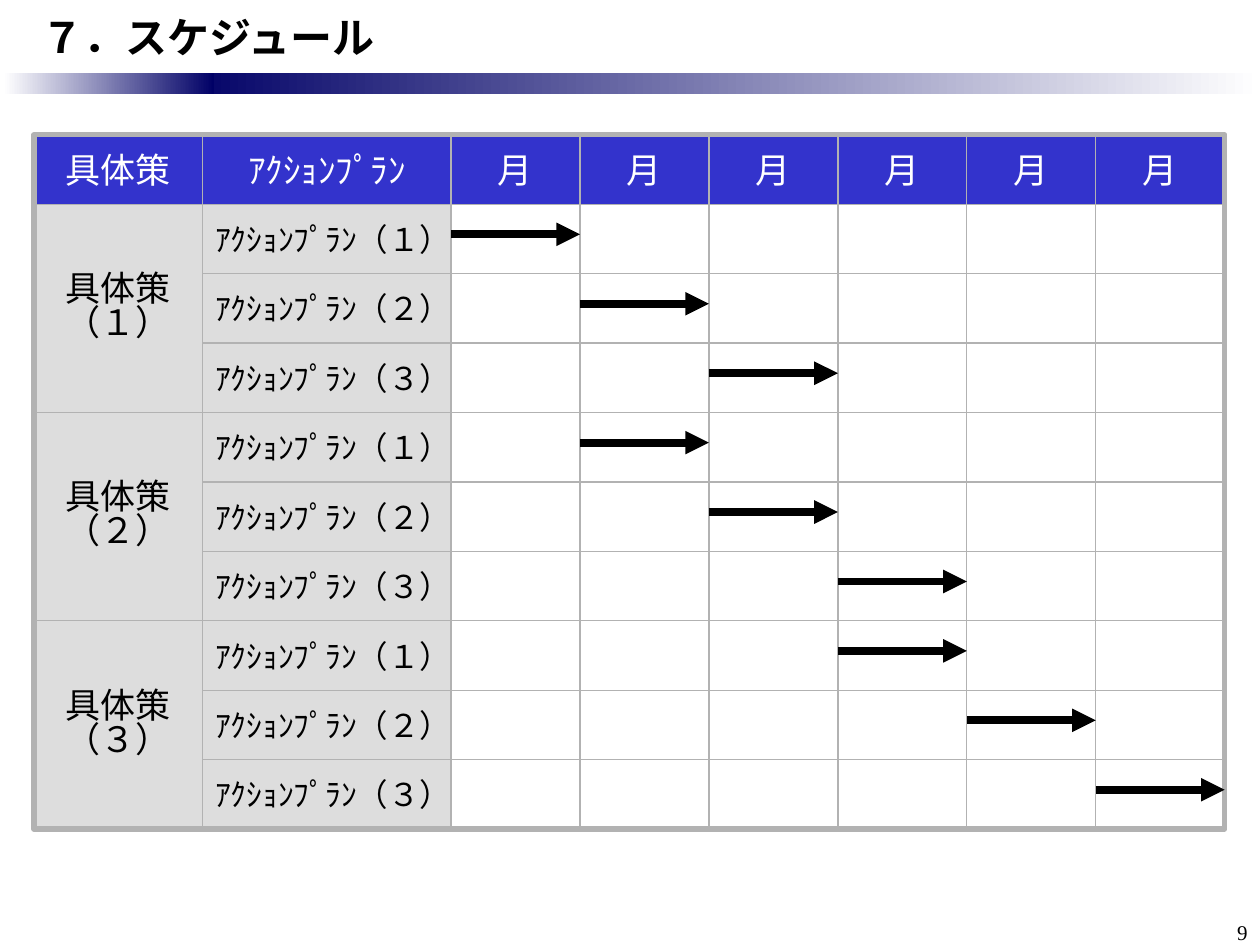
"""Builds a schedule slide with a month grid and an arrow for each action plan."""
from pptx import Presentation
from pptx.dml.color import RGBColor
from pptx.enum.shapes import MSO_CONNECTOR, MSO_SHAPE
from pptx.enum.text import MSO_ANCHOR, PP_ALIGN
from pptx.oxml.ns import qn
from pptx.util import Inches, Pt
from lxml.etree import SubElement

NAVY = RGBColor(0x00, 0x00, 0x66)
BLUE = RGBColor(0x33, 0x33, 0xCC)
GRAY = RGBColor(0xB2, 0xB2, 0xB2)
PALE = RGBColor(0xDD, 0xDD, 0xDD)
WHITE = RGBColor(0xFF, 0xFF, 0xFF)
BLACK = RGBColor(0x00, 0x00, 0x00)
SANS = "Noto Sans CJK JP"
SERIF = "Times New Roman"

LEFT, TOP, WIDTH, HEIGHT = 0.27, 1.07, 9.45, 5.51
PLAN, START = 1.61, 3.58
MONTHS = 6
ROW = HEIGHT / 10
MONTH = (LEFT + WIDTH - START) / MONTHS


def write(shape, text, size, color=BLACK, align=PP_ALIGN.LEFT, face=SANS):
    para = shape.text_frame.paragraphs[0]
    para.text = text
    para.alignment = align
    font = para.font
    font.size, font.name, font.color.rgb = Pt(size), face, color
    SubElement(font._element, qn("a:ea")).set("typeface", SANS)
    return para


def cell(x, y, w, h, fill):
    box = slide.shapes.add_shape(
        MSO_SHAPE.RECTANGLE, Inches(x), Inches(y), Inches(w), Inches(h))
    box.shadow.inherit = False
    box.fill.solid()
    box.fill.fore_color.rgb = fill
    box.line.color.rgb = GRAY
    box.line.width = Pt(0.75)
    box.text_frame.vertical_anchor = MSO_ANCHOR.MIDDLE
    box.text_frame.word_wrap = h > ROW
    return box


deck = Presentation()
deck.slide_width, deck.slide_height = Inches(10), Inches(7.5)
slide = deck.slides.add_slide(deck.slide_layouts[6])

for x, w, first, last in [(1.42, 8.58, NAVY, WHITE), (0.03, 1.67, WHITE, NAVY)]:
    band = cell(x, 0.58, w, 0.17, WHITE)
    band.line.fill.background()
    band.fill.gradient()
    band.fill.gradient_angle = 0
    for stop, color, place in zip(band.fill.gradient_stops, (first, last), (0, 1)):
        stop.color.rgb = color
        stop.position = place

page = slide.shapes.add_textbox(Inches(9.42), Inches(7.25), Inches(0.58), Inches(0.25))
page.text_frame.word_wrap = True
write(page, "9", 12, align=PP_ALIGN.RIGHT, face=SERIF)

title = slide.shapes.add_textbox(0, 0, Inches(10), Inches(0.58))
title.text_frame.word_wrap = True
title.text_frame.margin_left = Inches(0.33)
title.text_frame.vertical_anchor = MSO_ANCHOR.MIDDLE
write(title, "７．スケジュール", 24).font.bold = True

heads = [(LEFT, PLAN - LEFT, "具体策"), (PLAN, START - PLAN, "ｱｸｼｮﾝﾌﾟﾗﾝ")]
heads += [(START + i * MONTH, MONTH, "月") for i in range(MONTHS)]
for x, w, text in heads:
    write(cell(x, TOP, w, ROW, BLUE), text, 20, WHITE, PP_ALIGN.CENTER)

for i, mark in enumerate("１２３"):
    y = TOP + ROW * (1 + 3 * i)
    group = cell(LEFT, y, PLAN - LEFT, 3 * ROW, PALE)
    write(group, f"具体策（{mark}）", 20, align=PP_ALIGN.CENTER).line_spacing = 0.81
    for j, num in enumerate("１２３"):
        top = y + j * ROW
        face = SERIF if j else SANS
        write(cell(PLAN, top, START - PLAN, ROW, PALE), f"ｱｸｼｮﾝﾌﾟﾗﾝ（{num}）", 18, face=face)
        for k in range(MONTHS):
            cell(START + k * MONTH, top, MONTH, ROW, WHITE)

frame = cell(LEFT, TOP, WIDTH, HEIGHT, WHITE)
frame.fill.background()
frame.line.width = Pt(3)

for i, month in enumerate([0, 1, 2, 1, 2, 3, 3, 4, 5]):
    x, y = START + month * MONTH, 1.86 + i * ROW
    arrow = slide.shapes.add_connector(
        MSO_CONNECTOR.STRAIGHT, Inches(x), Inches(y), Inches(x + MONTH), Inches(y))
    arrow.line.color.rgb = BLACK
    arrow.line.width = Pt(4.5)
    SubElement(arrow.line._get_or_add_ln(), qn("a:tailEnd")).set("type", "triangle")
    SubElement(arrow._element.spPr, qn("a:effectLst"))

deck.save("out.pptx")
